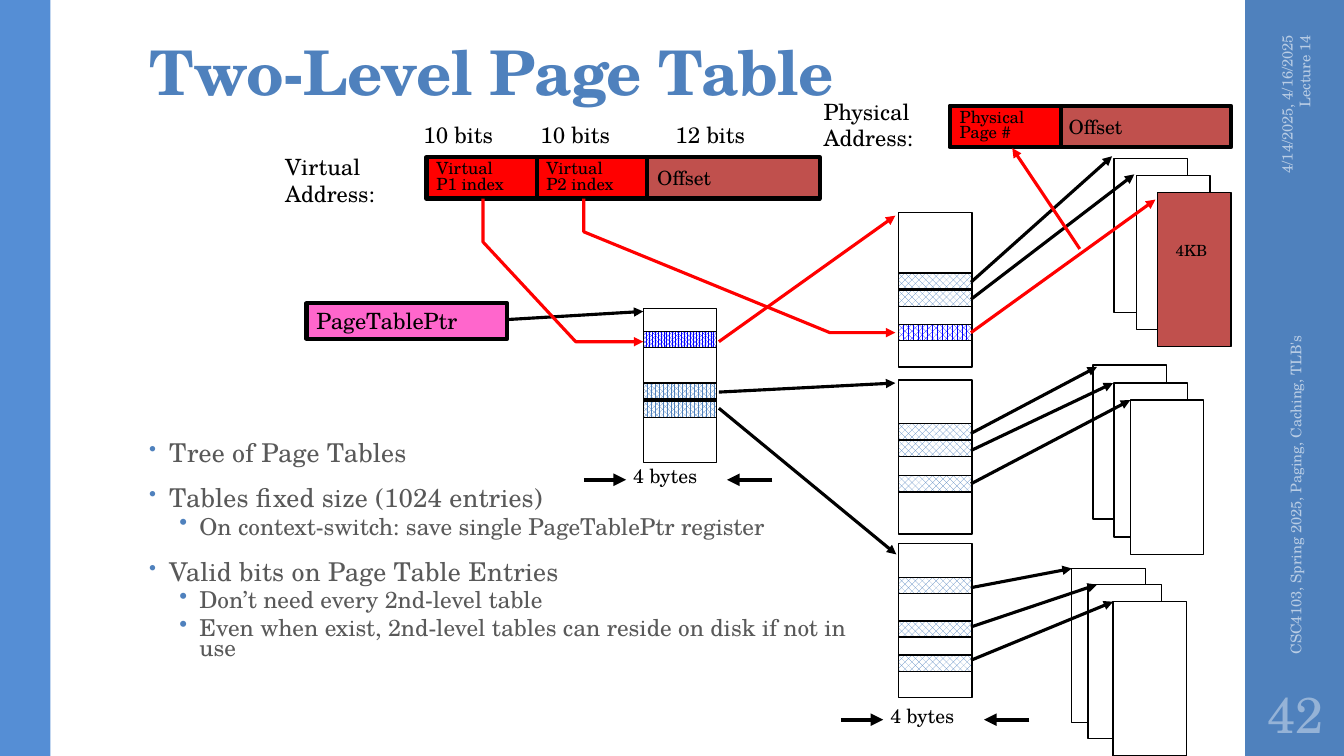
from lxml.etree import SubElement
from pptx import Presentation
from pptx.dml.color import RGBColor
from pptx.enum.dml import MSO_PATTERN
from pptx.enum.shapes import MSO_CONNECTOR, MSO_SHAPE
from pptx.enum.text import MSO_ANCHOR, MSO_AUTO_SIZE, PP_ALIGN
from pptx.oxml.ns import qn
from pptx.util import Inches, Pt

FONT = "TeX Gyre Schola"
COLORS = {
    "blue": "4F81BD", "edge": "558ED5", "footer": "B9CDE5", "number": "95B3D7",
    "body": "595959", "black": "000000", "white": "FFFFFF", "red": "FF0000",
    "brick": "C0504D", "pink": "FF66CC", "entry": "0000FF",
}
WIDTH, HEIGHT, ENTRY_HEIGHT = 0.73, 1.53, 0.16


def rgb(name):
    """Return the named colour."""
    return RGBColor.from_string(COLORS[name])


def write_run(paragraph, text, size, color, bold=False, tracking=0):
    """Add one formatted run; tracking is in hundredths of a point."""
    run = paragraph.add_run()
    run.text = text
    run.font.name, run.font.size, run.font.bold = FONT, Pt(size), bold
    run.font.color.rgb = rgb(color)
    if tracking:
        run.font._element.set("spc", str(tracking))


def write_lines(shape, lines, size, color="black", spacing=1.0, insets=(0.1, 0.05),
                anchor=MSO_ANCHOR.TOP, align=PP_ALIGN.LEFT, wrap=False, **run_options):
    """Fill a shape with one paragraph per line."""
    frame = shape.text_frame
    frame.word_wrap, frame.vertical_anchor = wrap, anchor
    frame.margin_left = frame.margin_right = Inches(insets[0])
    frame.margin_top = frame.margin_bottom = Inches(insets[1])
    for index, line in enumerate(lines):
        paragraph = frame.add_paragraph() if index else frame.paragraphs[0]
        paragraph.alignment, paragraph.line_spacing = align, spacing
        write_run(paragraph, line, size, color, **run_options)


def add_text(slide, box, lines, size, rotation=0, **options):
    """Add a text box holding the given lines."""
    shape = slide.shapes.add_textbox(*map(Inches, box))
    shape.rotation = rotation
    write_lines(shape, lines, size, **options)
    return shape


def add_label(slide, box, text, size):
    """Add a small caption that grows with its text."""
    shape = add_text(slide, box, [text], size, spacing=0.9, insets=(0.07, 0.03))
    shape.text_frame.auto_size = MSO_AUTO_SIZE.SHAPE_TO_FIT_TEXT
    return shape


def add_box(slide, box, fill=None, line_width=1, pattern=None):
    """Add a rectangle with a plain, patterned or empty fill."""
    shape = slide.shapes.add_shape(MSO_SHAPE.RECTANGLE, *map(Inches, box))
    shape.shadow.inherit = False
    if pattern:
        shape.fill.patterned()
        shape.fill.pattern = pattern
        shape.fill.fore_color.rgb, shape.fill.back_color.rgb = rgb(fill), rgb("white")
    elif fill:
        shape.fill.solid()
        shape.fill.fore_color.rgb = rgb(fill)
    else:
        shape.fill.background()
    if line_width:
        shape.line.color.rgb, shape.line.width = rgb("black"), Pt(line_width)
    else:
        shape.line.fill.background()
    return shape


def add_field(slide, box, fill, lines, size, spacing=1.0):
    """Add a thick-edged address field."""
    shape = add_box(slide, box, fill, 3)
    write_lines(shape, lines, size, spacing=spacing, anchor=MSO_ANCHOR.MIDDLE)


def finish_arrow(shape, color, width):
    """Style a line and put an arrowhead on its end."""
    shape.line.color.rgb, shape.line.width = rgb(color), Pt(width)
    properties = shape._element.spPr
    SubElement(properties.find(qn("a:ln")), qn("a:tailEnd"), type="triangle")


def add_arrow(slide, start, end, color="black", width=2.25):
    """Add a straight arrow."""
    arrow = slide.shapes.add_connector(
        MSO_CONNECTOR.STRAIGHT, *map(Inches, (*start, *end)))
    finish_arrow(arrow, color, width)
    SubElement(arrow._element.spPr, qn("a:effectLst"))


def add_bent_arrow(slide, points):
    """Add a red arrow through several points."""
    corners = [(Inches(x), Inches(y)) for x, y in points]
    builder = slide.shapes.build_freeform(*corners[0])
    builder.add_line_segments(corners[1:], close=False)
    arrow = builder.convert_to_shape()
    arrow.shadow.inherit = False
    arrow.fill.background()
    finish_arrow(arrow, "red", 2.25)


def add_page_table(slide, left, top, entries):
    """Add a page table with its (top, colour, pattern) entries."""
    add_box(slide, (left, top, WIDTH, HEIGHT))
    for entry_top, color, pattern in entries:
        add_box(slide, (left, entry_top, WIDTH, ENTRY_HEIGHT), color, 1, pattern)


def add_width_mark(slide, left, top):
    """Mark an entry width of 4 bytes between two arrows."""
    add_label(slide, (left, top, 0.78, 0.27), "4 bytes", 14)
    level = top + 0.16
    add_arrow(slide, (left - 0.42, level), (left, level), width=3)
    add_arrow(slide, (left + 1.45, level), (left + 1, level), width=3)


def add_bullets(slide, box, bullets):
    """Add the two-level bullet list from (level, text) pairs."""
    frame = slide.shapes.add_textbox(*map(Inches, box)).text_frame
    frame.word_wrap = True
    for index, (level, text) in enumerate(bullets):
        paragraph = frame.add_paragraph() if index else frame.paragraphs[0]
        paragraph.level = level
        properties = paragraph._p.get_or_add_pPr()
        properties.set("marL", str(Inches((0.2, 0.5)[level])))
        properties.set("indent", str(Inches(-0.2)))
        bullet_color = SubElement(properties, qn("a:buClr"))
        SubElement(bullet_color, qn("a:srgbClr"), val=COLORS["blue"])
        SubElement(properties, qn("a:buSzPct"), val=("80000", "100000")[level])
        SubElement(properties, qn("a:buChar"), char="•")
        paragraph.line_spacing = (0.75, 0.7)[level]
        paragraph.space_before = Pt((14, 3)[level] if index else 0)
        paragraph.space_after = Pt((2, 3)[level])
        write_run(paragraph, text, (18.5, 16.6)[level], "body", tracking=(10, 0)[level])


def add_frame(slide):
    """Add the side bands, title, footers and slide number."""
    add_box(slide, (12.35, 0, 1, 7.5), "blue", 0)
    add_box(slide, (0, 0, 0.5, 7.5), "edge", 0)
    add_text(slide, (1.38, 0.32, 10.6, 1.53), ["Two-Level Page Table"], 44, color="blue",
             spacing=0.9, insets=(0.1, 0.1), wrap=True, bold=True, tracking=-50)
    footer = dict(color="footer", rotation=270, anchor=MSO_ANCHOR.MIDDLE, wrap=True)
    add_text(slide, (11.81, 1.09, 2.08, 0.4), ["4/14/2025, 4/16/2025 Lecture 14"], 10.5,
             align=PP_ALIGN.RIGHT, **footer)
    add_text(slide, (10.89, 4.43, 3.92, 0.4),
             ["CSC4103, Spring 2025, Paging, Caching, TLB's"], 10.5, **footer)
    add_text(slide, (12.35, 6.75, 1, 0.65), ["42"], 36, color="number", wrap=True,
             insets=(0.05, 0.05), anchor=MSO_ANCHOR.MIDDLE, align=PP_ALIGN.CENTER)


def add_addresses(slide):
    """Add the virtual and physical addresses and the table pointer."""
    for left, top, name in ((8.07, 0.92, "Physical"), (2.73, 1.47, "Virtual")):
        add_text(slide, (left, top, 1.1, 0.64), [name, "Address:"], 16)
    for left, bits in ((4.13, 10), (5.29, 10), (6.63, 12)):
        add_label(slide, (left, 1.2, 0.84, 0.3), f"{bits} bits", 16)
    for left, top in ((10.5, 1.05), (6.42, 1.56)):
        add_field(slide, (left, top, 1.71, 0.41), "brick", ["Offset"], 14)
    for left, top, lines in ((9.42, 1.05, ["Physical", "Page #"]),
                             (5.32, 1.56, ["Virtual", "P2 index"]),
                             (4.23, 1.56, ["Virtual", "P1 index"])):
        add_field(slide, (left, top, 1.1, 0.41), "red", lines, 12, 0.75)
    add_field(slide, (3.04, 3.01, 1.99, 0.35), "pink", ["PageTablePtr"], 16)


def add_tables(slide):
    """Add the memory pages and both levels of page tables."""
    pages = ((11.05, 1.57), (11.27, 1.74), (11.48, 1.91), (10.84, 3.62), (11.05, 3.8),
             (11.21, 3.97), (10.63, 5.64), (10.79, 5.8), (11.04, 5.97))
    for index, (left, top) in enumerate(pages):
        add_box(slide, (left, top, WIDTH, HEIGHT), "brick" if index == 2 else "white")
    add_label(slide, (11.59, 2.38, 0.46, 0.22), "4KB", 11)

    root = ("blue", MSO_PATTERN.PERCENT_75)
    leaf = ("blue", MSO_PATTERN.PERCENT_50)
    add_page_table(slide, 6.38, 3.06, [
        (3.29, "entry", MSO_PATTERN.PERCENT_80), (3.8, *root), (3.98, *root)])
    add_page_table(slide, 8.91, 2.11, [
        (2.71, *leaf), (2.88, *leaf), (3.22, "entry", MSO_PATTERN.PERCENT_70)])
    add_page_table(slide, 8.91, 3.77, [(top, *leaf) for top in (4.2, 4.37, 4.72)])
    add_page_table(slide, 8.91, 5.39, [(top, *leaf) for top in (5.73, 6.16, 6.5)])
    add_width_mark(slide, 6.21, 4.6)
    add_width_mark(slide, 8.76, 6.98)


def add_links(slide):
    """Add the arrows that walk through the page tables."""
    add_arrow(slide, (5.04, 3.17), (6.38, 3.09))
    add_bent_arrow(slide, [(4.79, 1.97), (4.79, 2.4), (5.71, 3.39), (6.38, 3.39)])
    add_bent_arrow(slide, [(5.79, 1.97), (5.79, 2.3), (8.23, 3.3), (8.88, 3.3)])
    for start, end, color in ((3.39, (8.88, 2.14), "red"), (3.89, (8.88, 3.8), "black"),
                              (4.05, (8.89, 5.5), "black")):
        add_arrow(slide, (7.13, start), end, color)
    page_links = ((2.8, 11.03, 1.55), (2.97, 11.25, 1.73), (3.3, 11.46, 1.98),
                  (4.3, 10.88, 3.64), (4.47, 11.04, 3.8), (4.8, 11.21, 3.97),
                  (5.83, 10.63, 5.64), (6.22, 10.88, 5.8), (6.55, 11.04, 5.97))
    for index, (start, *end) in enumerate(page_links):
        add_arrow(slide, (9.63, start), end, "red" if index == 2 else "black")
    add_arrow(slide, (10.71, 2.47), (10.04, 1.47), "red")


def main():
    """Build the slide and save it."""
    presentation = Presentation()
    presentation.slide_width, presentation.slide_height = Inches(13.33), Inches(7.5)
    slide = presentation.slides.add_slide(presentation.slide_layouts[6])
    add_frame(slide)
    add_bullets(slide, (1.38, 4.35, 7.37, 2.41), [
        (0, "Tree of Page Tables"),
        (0, "Tables fixed size (1024 entries)"),
        (1, "On context-switch: save single PageTablePtr register"),
        (0, "Valid bits on Page Table Entries"),
        (1, "Don’t need every 2nd-level table"),
        (1, "Even when exist, 2nd-level tables can reside on disk if not in use"),
    ])
    add_addresses(slide)
    add_tables(slide)
    add_links(slide)
    presentation.save("out.pptx")


if __name__ == "__main__":
    main()
